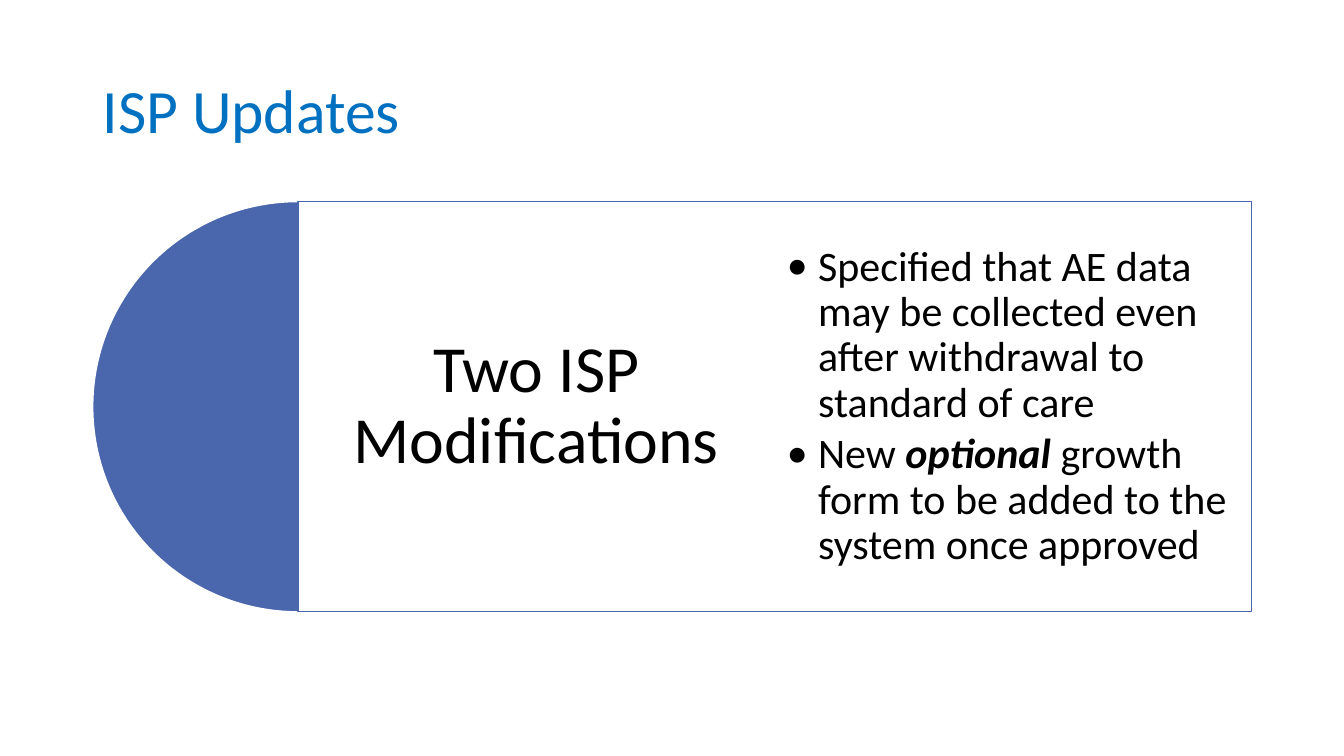
import pptx
import pptx.dml.color
import pptx.enum.shapes
import pptx.enum.text
import pptx.oxml
import pptx.oxml.ns
import pptx.util
from pptx.util import Inches

COLORS = {"title": "0070C0", "accent": "4A66AC", "white": "FFFFFF", "text": "000000"}
SHAPES = pptx.enum.shapes.MSO_SHAPE
ALIGN = pptx.enum.text.PP_ALIGN


def rgb(name):
    return pptx.dml.color.RGBColor.from_string(COLORS[name])


class SlideBuilder:
    font = "Calibri"
    line_spacing = 0.9

    def __init__(self, slide):
        self.slide = slide

    def shape(self, kind, box, fill, line, adjustments=(), opacity=None):
        shape = self.slide.shapes.add_shape(kind, *map(Inches, box))
        shape.shadow.inherit = False
        for index, value in enumerate(adjustments):
            shape.adjustments[index] = value
        shape.fill.solid()
        shape.fill.fore_color.rgb = rgb(fill)
        shape.line.color.rgb = rgb(line)
        shape.line.width = pptx.util.Pt(1)
        if opacity is not None:
            color = shape.fill._xPr.find(".//" + pptx.oxml.ns.qn("a:srgbClr"))
            alpha = pptx.oxml.parse_xml(
                f'<a:alpha {pptx.oxml.ns.nsdecls("a")} val="{opacity * 1000}"/>')
            color.append(alpha)

    def text(self, box, paragraphs, size, color="text", inset=(0.1, 0.05),
             align=ALIGN.LEFT, space_after=0, bullet_indent=None):
        """Each paragraph is a list of (text, emphasized) runs."""
        text_box = self.slide.shapes.add_textbox(*map(Inches, box))
        frame = text_box.text_frame
        frame.word_wrap = True
        frame.vertical_anchor = pptx.enum.text.MSO_ANCHOR.MIDDLE
        frame.margin_left = frame.margin_right = Inches(inset[0])
        frame.margin_top = frame.margin_bottom = Inches(inset[1])
        for index, runs in enumerate(paragraphs):
            paragraph = frame.add_paragraph() if index else frame.paragraphs[0]
            paragraph.alignment = align
            paragraph.line_spacing = self.line_spacing
            paragraph.space_after = pptx.util.Pt(space_after)
            if bullet_indent:
                self.bullet(paragraph, bullet_indent)
            paragraph.font.name = self.font
            paragraph.font.size = pptx.util.Pt(size)
            for content, emphasized in runs:
                run = paragraph.add_run()
                run.text = content
                run.font.name = self.font
                run.font.size = pptx.util.Pt(size)
                run.font.color.rgb = rgb(color)
                run.font.bold = run.font.italic = emphasized

    def bullet(self, paragraph, indent):
        properties = paragraph._p.get_or_add_pPr()
        properties.set("marL", str(Inches(indent)))
        properties.set("indent", str(-Inches(indent)))
        namespace = pptx.oxml.ns.nsdecls("a")
        for element in (f'<a:buFont {namespace} typeface="{self.font}"/>',
                        f'<a:buChar {namespace} char="•"/>'):
            properties.append(pptx.oxml.parse_xml(element))


def main():
    presentation = pptx.Presentation()
    presentation.slide_width = Inches(13.33)
    presentation.slide_height = Inches(7.5)
    slide = presentation.slides.add_slide(presentation.slide_layouts[6])
    builder = SlideBuilder(slide)

    # Title
    builder.text((0.92, 0.4, 11.5, 1.45), [[("ISP Updates", False)]], 44, "title")

    # Half circle and the panel that starts at its centre
    left, top, diameter, column = 0.92, 2, 4.07, 4.73
    panel_left = left + diameter / 2
    builder.shape(SHAPES.PIE, (left, top, diameter, diameter), "accent", "white",
                  adjustments=(54, 162))  # 90 and 270 degrees
    builder.shape(SHAPES.RECTANGLE, (panel_left, top, 2 * column, diameter),
                  "white", "accent", opacity=90)

    # Panel heading and bullets, one column each
    builder.text((panel_left, top, column, diameter),
                 [[("Two ISP Modifications", False)]], 47, inset=(0.2, 0.2),
                 align=ALIGN.CENTER, space_after=16.5)
    builder.text(
        (panel_left + column, top, column, diameter),
        [[("Specified that AE data may be collected even after withdrawal "
           "to standard of care", False)],
         [("New ", False), ("optional", True),
          (" growth form to be added to the system once approved", False)]],
        30, inset=(0.12, 0.12), space_after=4.5, bullet_indent=0.31)

    presentation.save("out.pptx")


if __name__ == "__main__":
    main()
